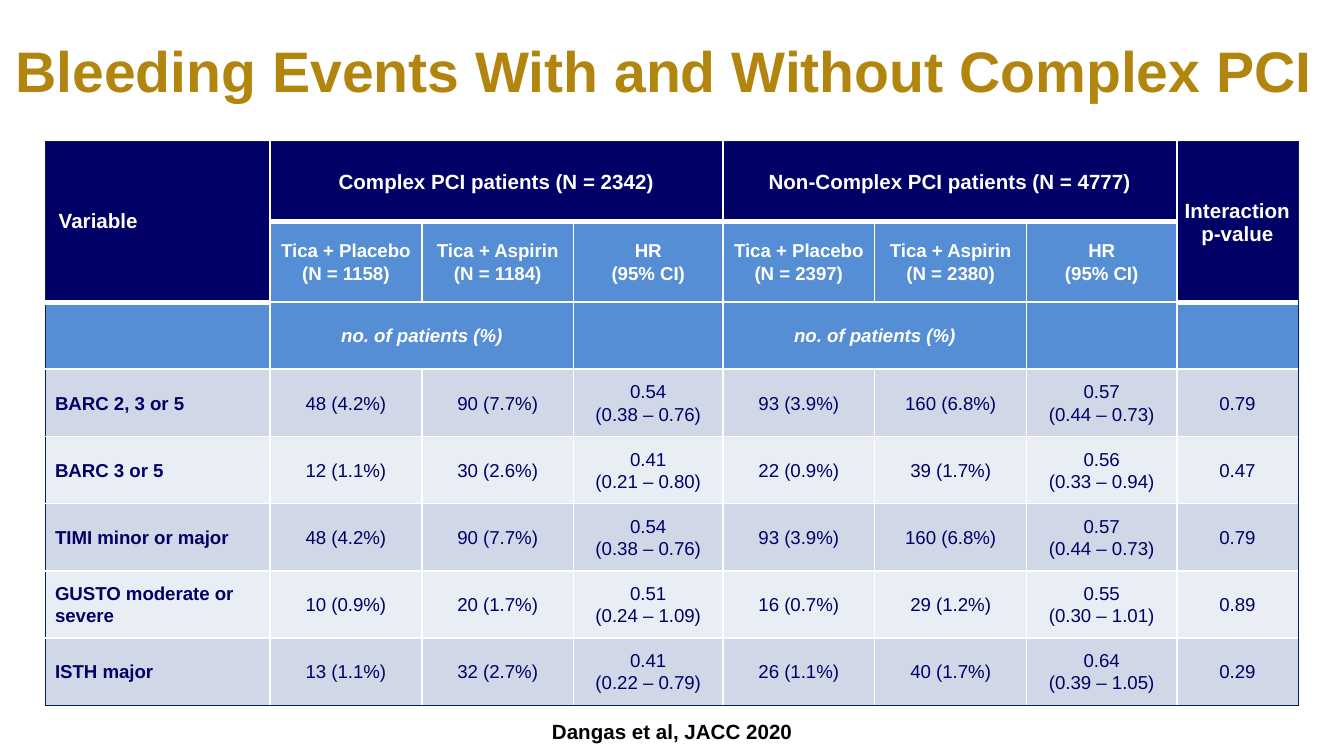
from lxml import etree
from pptx import Presentation
from pptx.dml.color import RGBColor
from pptx.enum.text import MSO_ANCHOR, PP_ALIGN
from pptx.oxml.ns import qn
from pptx.util import Cm, Pt

LEFT, CENTER = PP_ALIGN.LEFT, PP_ALIGN.CENTER
MIDDLE = MSO_ANCHOR.MIDDLE

NAVY, BLUE, WHITE = "000066", "558ED5", "FFFFFF"
BANDS = ("D0D8E8", "E9EDF4")
EDGE = ("002060", 0.5)
THIN, THICK = (WHITE, 1), (WHITE, 3)

WIDTHS = (4.24, 2.87, 2.87, 2.82, 2.87, 2.87, 2.84, 2.29)
HEIGHTS = (1.52,) * 2 + (1.27,) * 6
LAST_ROW, LAST_COL = len(HEIGHTS) - 1, len(WIDTHS) - 1

# First row, first column, last row, last column
SPANS = ((0, 0, 1, 0), (0, 1, 0, 3), (0, 4, 0, 6), (0, 7, 1, 7),
         (2, 1, 2, 2), (2, 4, 2, 5))

HEADS = {0: "Variable", 1: "Complex PCI patients (N = 2342)",
         4: "Non-Complex PCI patients (N = 4777)",
         7: "Interaction\np-value"}
ARMS = ("Tica + Placebo\n(N = 1158)", "Tica + Aspirin\n(N = 1184)",
        "HR\n(95% CI)", "Tica + Placebo\n(N = 2397)",
        "Tica + Aspirin\n(N = 2380)", "HR\n(95% CI)")
UNITS = {1: "no. of patients (%)", 4: "no. of patients (%)"}
EVENTS = (
    ("BARC 2, 3 or 5", "48 (4.2%)", "90 (7.7%)", "0.54\n(0.38 – 0.76)",
     "93 (3.9%)", "160 (6.8%)", "0.57\n(0.44 – 0.73)", "0.79"),
    ("BARC 3 or 5", "12 (1.1%)", "30 (2.6%)", "0.41\n(0.21 – 0.80)",
     "22 (0.9%)", "39 (1.7%)", "0.56\n(0.33 – 0.94)", "0.47"),
    ("TIMI minor or major", "48 (4.2%)", "90 (7.7%)", "0.54\n(0.38 – 0.76)",
     "93 (3.9%)", "160 (6.8%)", "0.57\n(0.44 – 0.73)", "0.79"),
    ("GUSTO moderate or severe", "10 (0.9%)", "20 (1.7%)",
     "0.51\n(0.24 – 1.09)", "16 (0.7%)", "29 (1.2%)",
     "0.55\n(0.30 – 1.01)", "0.89"),
    ("ISTH major", "13 (1.1%)", "32 (2.7%)", "0.41\n(0.22 – 0.79)",
     "26 (1.1%)", "40 (1.7%)", "0.64\n(0.39 – 1.05)", "0.29"),
)


def color(code):
    return RGBColor.from_string(code)


def write(frame, text, size=10, ink=WHITE, bold=True, italic=False,
          align=CENTER, space=1.0):
    frame.text = text
    for para in frame.paragraphs:
        para.alignment = align
        para.line_spacing = space
        font = para.font
        font.name, font.size = "Arial", Pt(size)
        font.bold, font.italic = bold, italic
        font.color.rgb = color(ink)


def place(shape, left, top, width, height):
    shape.left, shape.top = Cm(left), Cm(top)
    shape.width, shape.height = Cm(width), Cm(height)


def pad(cell, side, top, bottom):
    cell.margin_left = cell.margin_right = Cm(side)
    cell.margin_top, cell.margin_bottom = Cm(top), Cm(bottom)


def ends_head(row, col):
    """Tell whether a thick rule runs below this cell."""
    return row == (1 if col in (0, LAST_COL) else 0)


def borders(cell, row, col):
    lines = {
        "L": EDGE if col == 0 else THIN,
        "R": EDGE if col == LAST_COL else THIN,
        "T": EDGE if row == 0 else THICK if ends_head(row - 1, col) else THIN,
        "B": EDGE if row == LAST_ROW else THICK if ends_head(row, col) else THIN,
    }
    props = cell._tc.get_or_add_tcPr()
    for side, (code, width) in lines.items():
        line = etree.SubElement(props, qn(f"a:ln{side}"), w=str(Pt(width)))
        fill = etree.SubElement(line, qn("a:solidFill"))
        etree.SubElement(fill, qn("a:srgbClr"), val=code)


def paint(cell, row, col):
    borders(cell, row, col)
    if row == 0 or (row == 1 and col in (0, LAST_COL)):
        code = NAVY
    else:
        code = BLUE if row < 3 else BANDS[(row - 3) % 2]
    cell.fill.solid()
    cell.fill.fore_color.rgb = color(code)
    cell.vertical_anchor = MIDDLE
    pad(cell, 0.18, 0, 0)


def add_grid(slide):
    frame = slide.shapes.add_table(
        len(HEIGHTS), len(WIDTHS), Cm(0.86), Cm(2.67),
        Cm(sum(WIDTHS)), Cm(sum(HEIGHTS)))
    grid = frame.table
    for col, width in zip(grid.columns, WIDTHS):
        col.width = Cm(width)
    for row, height in zip(grid.rows, HEIGHTS):
        row.height = Cm(height)
    for row in range(len(HEIGHTS)):
        for col in range(len(WIDTHS)):
            paint(grid.cell(row, col), row, col)
    for top, left, bottom, right in SPANS:
        grid.cell(top, left).merge(grid.cell(bottom, right))
    return grid


def fill_grid(grid):
    # Header rows
    for col, text in HEADS.items():
        cell = grid.cell(0, col)
        if col:
            pad(cell, 0.03, 0.03, 0)
        else:
            pad(cell, 0.25, 0.13, 0.13)
        write(cell.text_frame, text, size=11, align=CENTER if col else LEFT)
    for col, text in enumerate(ARMS, 1):
        write(grid.cell(1, col).text_frame, text, space=1.07)
    for col, text in UNITS.items():
        write(grid.cell(2, col).text_frame, text, italic=True, space=1.07)
    # Event rows
    for row, event in enumerate(EVENTS, 3):
        for col, text in enumerate(event):
            write(grid.cell(row, col).text_frame, text, ink=NAVY,
                  bold=col == 0, align=CENTER if col else LEFT, space=1.07)


def add_title(slide):
    title = slide.shapes.title
    place(title, -0.03, 0.53, 25.45, 1.57)
    title.text_frame.vertical_anchor = MIDDLE
    write(title.text_frame, "Bleeding Events With and Without Complex PCI ",
          size=30.6, ink="B2860E")


def add_source(slide):
    box = slide.shapes.add_textbox(Cm(8.08), Cm(13.46), Cm(9.25), Cm(0.74))
    box.text_frame.word_wrap = True
    box.text_frame.vertical_anchor = MIDDLE
    write(box.text_frame, "Dangas et al, JACC 2020", size=11, ink="000000")


def main():
    deck = Presentation()
    deck.slide_width, deck.slide_height = Cm(25.4), Cm(14.29)
    slide = deck.slides.add_slide(deck.slide_layouts[5])
    add_title(slide)
    fill_grid(add_grid(slide))
    add_source(slide)
    deck.save("out.pptx")


if __name__ == "__main__":
    main()
